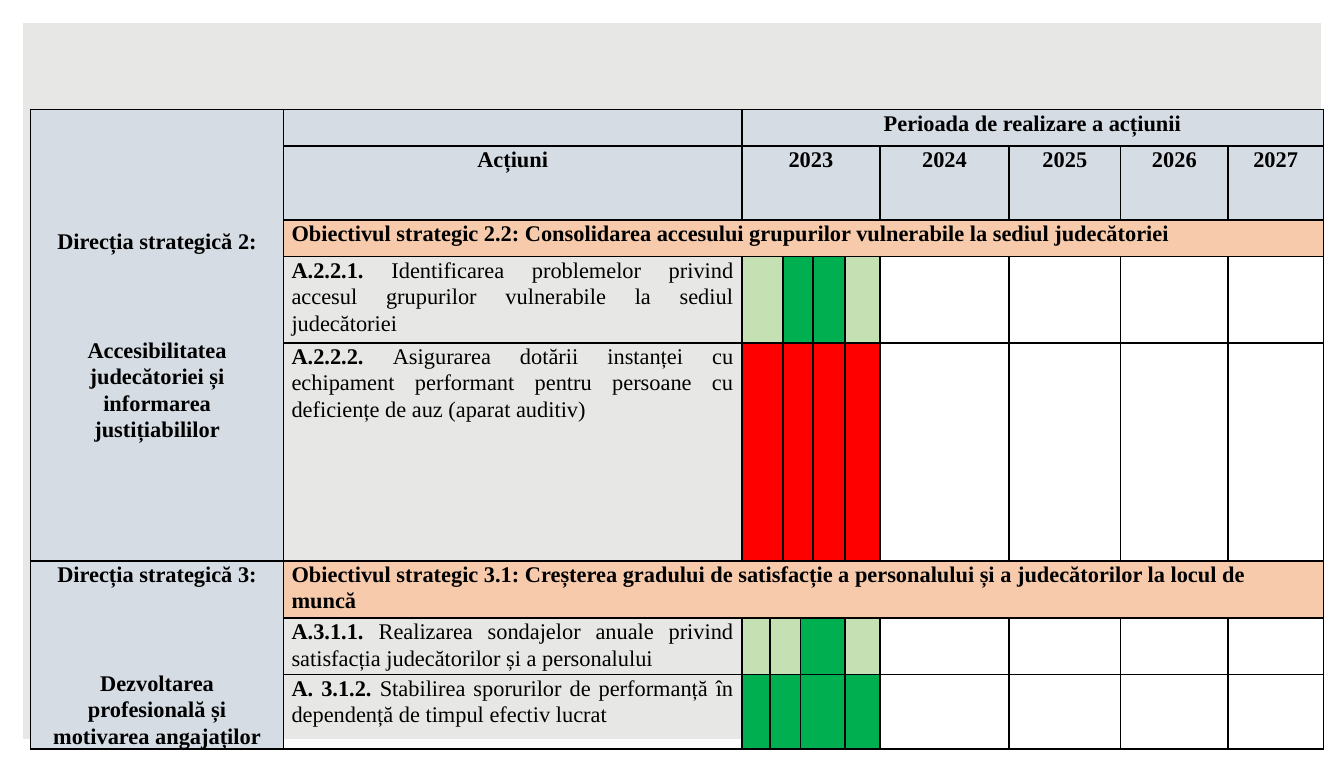
from dataclasses import dataclass

from lxml import etree
from pptx import Presentation
from pptx import util as u
from pptx.dml.color import RGBColor
from pptx.enum import shapes, text
from pptx.oxml import ns


@dataclass(frozen=True)
class Theme:
    font: str = "Times New Roman"
    size: int = 12
    ink: str = "000000"
    back: str = "E7E7E5"
    white: str = "FFFFFF"
    header: str = "D5DCE4"
    objective: str = "F7CAAC"
    pale: str = "C5E0B2"
    green: str = "00B050"
    red: str = "FF0000"


T = Theme()
CENTER, LEFT, JUSTIFY = (text.PP_ALIGN.CENTER, text.PP_ALIGN.LEFT,
                         text.PP_ALIGN.JUSTIFY)
COLS = [4.78, 8.66, 0.53, 0.25, 0.33, 0.23, 0.61, 0.66, 2.44, 2.11, 2.03, 1.8]
ROWS = [0.69, 1.4, 0.69, 1.63, 4.12, 1.08, 1.07, 1.4]
FIRST_YEAR_COL = 8
LAST_COL = len(COLS) - 1

# first row, last row, heading, name
DIRECTIONS = [
    (0, 4, "Direcția strategică 2:",
     "Accesibilitatea judecătoriei și informarea justițiabililor"),
    (5, 7, "Direcția strategică 3:",
     "Dezvoltarea profesională și motivarea angajaților"),
]
OBJECTIVES = {
    2: "Obiectivul strategic 2.2: Consolidarea accesului grupurilor "
       "vulnerabile la sediul judecătoriei",
    5: "Obiectivul strategic 3.1: Creșterea gradului de satisfacție a "
       "personalului și a judecătorilor la locul de muncă",
}
# Column ranges of the four quarters of 2023
QUARTERS_A = [(2, 3), (4, 5), (6, 6), (7, 7)]
QUARTERS_B = [(2, 2), (3, 4), (5, 6), (7, 7)]
# row: code, action, quarter columns, quarter colours
ACTIONS = {
    3: ("A.2.2.1. ", "Identificarea problemelor privind accesul grupurilor "
        "vulnerabile la sediul judecătoriei",
        QUARTERS_A, [T.pale, T.green, T.green, T.pale]),
    4: ("A.2.2.2. ", "Asigurarea dotării instanței cu echipament performant "
        "pentru persoane cu deficiențe de auz (aparat auditiv)",
        QUARTERS_A, [T.red] * 4),
    6: ("A.3.1.1. ", "Realizarea sondajelor anuale privind satisfacția "
        "judecătorilor și a personalului",
        QUARTERS_B, [T.pale, T.pale, T.green, T.pale]),
    7: ("A. 3.1.2. ", "Stabilirea sporurilor de performanță în dependență de "
        "timpul efectiv lucrat",
        QUARTERS_B, [T.green] * 4),
}


def write(tf, runs, *, align=LEFT, before=0, new=False):
    """Fill one paragraph with (words, bold) runs."""
    p = tf.add_paragraph() if new else tf.paragraphs[0]
    p.alignment = align
    p.line_spacing = 1.07
    p.space_before, p.space_after = u.Pt(before), u.Pt(6)
    for words, bold in runs:
        r = p.add_run()
        r.text = words
        r.font.name, r.font.size, r.font.bold = T.font, u.Pt(T.size), bold
        r.font.color.rgb = RGBColor.from_string(T.ink)


def prepare_cell(cell):
    """Black borders, tight margins and a small empty paragraph."""
    cell.margin_left = cell.margin_right = u.Cm(0.15)
    cell.margin_top = cell.margin_bottom = 0
    pr = cell._tc.get_or_add_tcPr()
    for side in ("a:lnL", "a:lnR", "a:lnT", "a:lnB"):
        ln = etree.SubElement(pr, ns.qn(side), w=str(u.Pt(1)))
        fill = etree.SubElement(ln, ns.qn("a:solidFill"))
        etree.SubElement(fill, ns.qn("a:srgbClr"), val=T.ink)
    cell.fill.background()
    end = etree.SubElement(cell.text_frame.paragraphs[0]._p,
                           ns.qn("a:endParaRPr"))
    end.set("sz", str(T.size * 100))


def block(table, row, first, last, color, bottom=None):
    """Merge a range of cells, colour it and return its first cell."""
    cell = table.cell(row, first)
    bottom = row if bottom is None else bottom
    if (row, first) != (bottom, last):
        cell.merge(table.cell(bottom, last))
    cell.fill.solid()
    cell.fill.fore_color.rgb = RGBColor.from_string(color)
    return cell


def add_directions(table):
    for top, bottom, heading, name in DIRECTIONS:
        cell = block(table, top, 0, 0, T.header, bottom)
        cell.vertical_anchor = text.MSO_ANCHOR.MIDDLE
        write(cell.text_frame, [(heading, True)], align=CENTER)
        write(cell.text_frame, [(name, True)], align=CENTER, before=38,
              new=True)


def add_header(table):
    block(table, 0, 1, 1, T.header)
    heads = [(0, 2, LAST_COL, "Perioada de realizare a acțiunii"),
             (1, 1, 1, "Acțiuni"),
             (1, 2, FIRST_YEAR_COL - 1, "2023")]
    heads += [(1, col, col, str(2024 + i))
              for i, col in enumerate(range(FIRST_YEAR_COL, LAST_COL + 1))]
    for row, first, last, words in heads:
        cell = block(table, row, first, last, T.header)
        write(cell.text_frame, [(words, True)], align=CENTER)


def add_action(table, row, code, action, quarters, colors):
    write(table.cell(row, 1).text_frame, [(code, True), (action, False)],
          align=JUSTIFY)
    for (first, last), color in zip(quarters, colors):
        block(table, row, first, last, color)
    for col in range(FIRST_YEAR_COL, LAST_COL + 1):
        block(table, row, col, col, T.white)


def add_plan(slide, left, top):
    table = slide.shapes.add_table(
        len(ROWS), len(COLS), u.Cm(left), u.Cm(top),
        u.Cm(sum(COLS)), u.Cm(sum(ROWS))).table
    table.first_row = table.horz_banding = False
    for column, width in zip(table.columns, COLS):
        column.width = u.Cm(width)
    for row, height in zip(table.rows, ROWS):
        row.height = u.Cm(height)
    for cell in table.iter_cells():
        prepare_cell(cell)
    add_directions(table)
    add_header(table)
    for row, words in OBJECTIVES.items():
        cell = block(table, row, 1, LAST_COL, T.objective)
        write(cell.text_frame, [(words, True)])
    for row, action in ACTIONS.items():
        add_action(table, row, *action)


def add_frame(slide, width, height):
    slide.background.fill.solid()
    slide.background.fill.fore_color.rgb = RGBColor.from_string(T.back)
    sp = slide.shapes.add_shape(shapes.MSO_SHAPE.FRAME, 0, 0, width, height)
    sp.adjustments[0] = 0.03
    sp.shadow.inherit = False
    sp.fill.solid()
    sp.fill.fore_color.rgb = RGBColor.from_string(T.white)
    sp.line.fill.background()


def main():
    prs = Presentation()
    prs.slide_width, prs.slide_height = u.Cm(25.4), u.Cm(14.4)
    slide = prs.slides.add_slide(prs.slide_layouts[6])
    add_frame(slide, prs.slide_width, prs.slide_height)
    add_plan(slide, 0.58, 2.07)
    prs.save("out.pptx")


if __name__ == "__main__":
    main()
